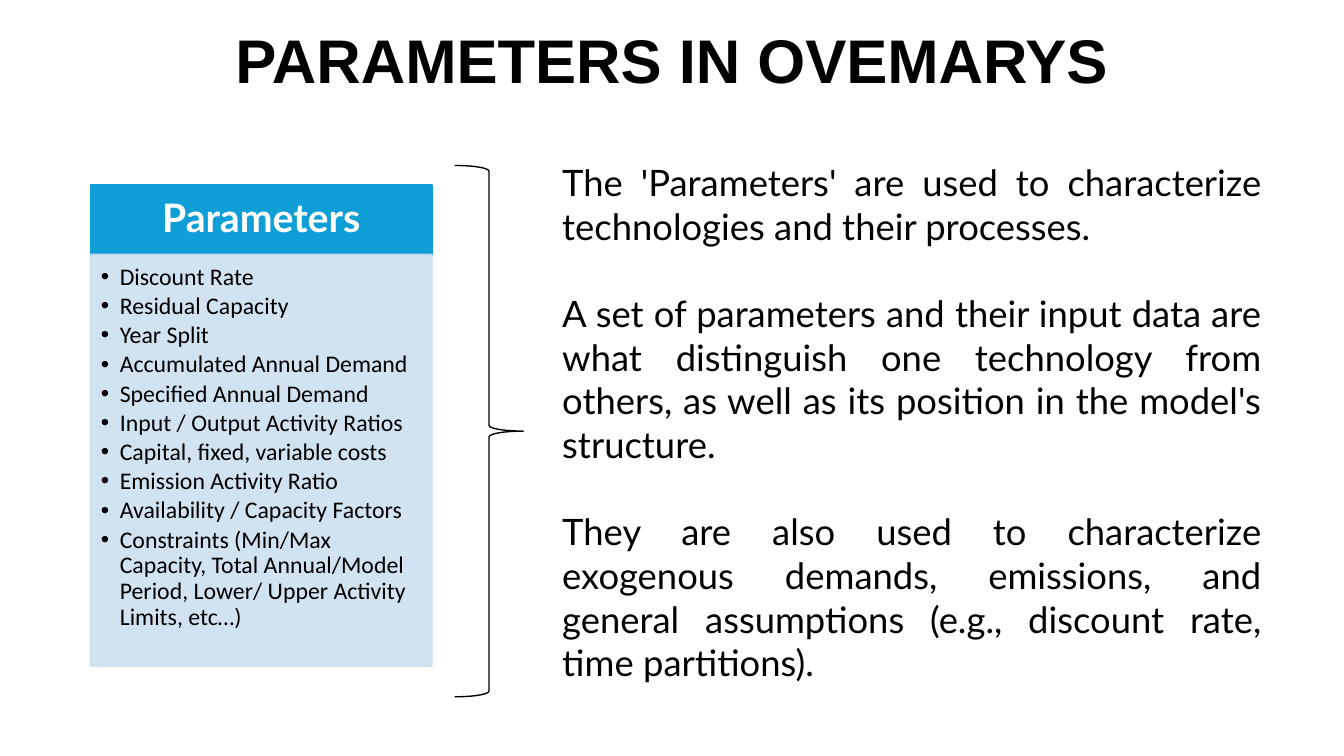
from lxml import etree
from pptx import Presentation
from pptx.dml.color import RGBColor
from pptx.enum.shapes import MSO_SHAPE
from pptx.enum.text import MSO_ANCHOR, PP_ALIGN
from pptx.oxml.ns import qn
from pptx.util import Cm, Pt

TITLE = "PARAMETERS IN OVEMARYS"
HEADING = "Parameters"
PARAMETERS = [
    "Discount Rate",
    "Residual Capacity",
    "Year Split",
    "Accumulated Annual Demand",
    "Specified Annual Demand",
    "Input / Output Activity Ratios",
    "Capital, fixed, variable costs",
    "Emission Activity Ratio",
    "Availability / Capacity Factors",
    "Constraints (Min/Max Capacity, Total Annual/Model Period, Lower/ Upper Activity Limits, etc…)",
]
EXPLANATION = [
    "The 'Parameters' are used to characterize technologies and their processes.",
    "A set of parameters and their input data are what distinguish one technology from others, "
    "as well as its position in the model's structure.",
    "They are also used to characterize exogenous demands, emissions, and general assumptions "
    "(e.g., discount rate, time partitions).",
]

BLACK = RGBColor(0x00, 0x00, 0x00)
WHITE = RGBColor(0xFF, 0xFF, 0xFF)
BLUE = RGBColor(0x0F, 0x9E, 0xD5)
PALE_BLUE = RGBColor(0xCC, 0xDF, 0xEF)
RECTANGLE, BRACE = MSO_SHAPE.RECTANGLE, MSO_SHAPE.RIGHT_BRACE
TOP, MIDDLE = MSO_ANCHOR.TOP, MSO_ANCHOR.MIDDLE
LEFT, CENTER, JUSTIFY = PP_ALIGN.LEFT, PP_ALIGN.CENTER, PP_ALIGN.JUSTIFY

CARD_LEFT, CARD_TOP, CARD_WIDTH = 2.29, 4.67, 8.59
HEADING_HEIGHT, LIST_HEIGHT = 1.75, 10.36
LIST_INDENT = Cm(0.48)
BODY_SIZE = 26

deck = Presentation()
deck.slide_width, deck.slide_height = Cm(33.87), Cm(19.05)
page = deck.slides.add_slide(deck.slide_layouts[6])


def add_box(kind, place, line_color, line_width, fill=None):
    box = page.shapes.add_shape(kind, *map(Cm, place))
    box.shadow.inherit = False
    if fill is None:
        box.fill.background()
    else:
        box.fill.solid()
        box.fill.fore_color.rgb = fill
    box.line.color.rgb = line_color
    box.line.width = Pt(line_width)
    return box


def write(box, lines, font, size, color, align, bold=False, anchor=TOP,
          insets=(0.25, 0.13, 0.25, 0.13), spacing=None, after=0):
    frame = box.text_frame
    frame.word_wrap = True
    frame.vertical_anchor = anchor
    frame.margin_left, frame.margin_top, frame.margin_right, frame.margin_bottom = map(Cm, insets)
    frame.text = "\n".join(lines)
    for para in frame.paragraphs:
        para.alignment = align
        para.line_spacing = spacing
        para.space_after = Pt(after)
        for span in para.runs:
            span.font.name = font
            span.font.size = Pt(size)
            span.font.bold = bold
            span.font.color.rgb = color


def add_bullets(box):
    for para in box.text_frame.paragraphs:
        settings = para._p.get_or_add_pPr()
        settings.set("marL", str(LIST_INDENT))
        settings.set("indent", str(-LIST_INDENT))
        etree.SubElement(settings, qn("a:buFont"), typeface="Arial")
        etree.SubElement(settings, qn("a:buChar"), char="•")


def set_opacity(box, percent):
    for color in box._element.spPr.iter(qn("a:srgbClr")):
        etree.SubElement(color, qn("a:alpha"), val=str(percent * 1000))


title = page.shapes.add_textbox(Cm(3.35), Cm(0.43), Cm(27.18), Cm(1.63))
write(title, [TITLE], "Arial", 44, BLACK, CENTER, bold=True)

explanation = page.shapes.add_textbox(Cm(13.92), Cm(3.91), Cm(18.14), Cm(13.59))
write(explanation, EXPLANATION, "Lato", BODY_SIZE, BLACK, JUSTIFY, after=BODY_SIZE * 1.2)

add_box(BRACE, (11.46, 4.17, 1.73, 13.39), BLACK, 1)

heading = add_box(RECTANGLE, (CARD_LEFT, CARD_TOP, CARD_WIDTH, HEADING_HEIGHT), BLUE, 1.5, BLUE)
write(heading, [HEADING], "Lato", 28, WHITE, CENTER, bold=True, anchor=MIDDLE,
      insets=(0.56, 0.3, 0.56, 0.3), spacing=0.9)

parameter_list = add_box(
    RECTANGLE, (CARD_LEFT, CARD_TOP + HEADING_HEIGHT, CARD_WIDTH, LIST_HEIGHT),
    PALE_BLUE, 1.5, PALE_BLUE)
set_opacity(parameter_list, 90)
write(parameter_list, PARAMETERS, "Calibri", 17, BLACK, LEFT,
      insets=(0.25, 0.25, 0.33, 0.38), spacing=0.9, after=2.5)
add_bullets(parameter_list)

deck.save("out.pptx")
